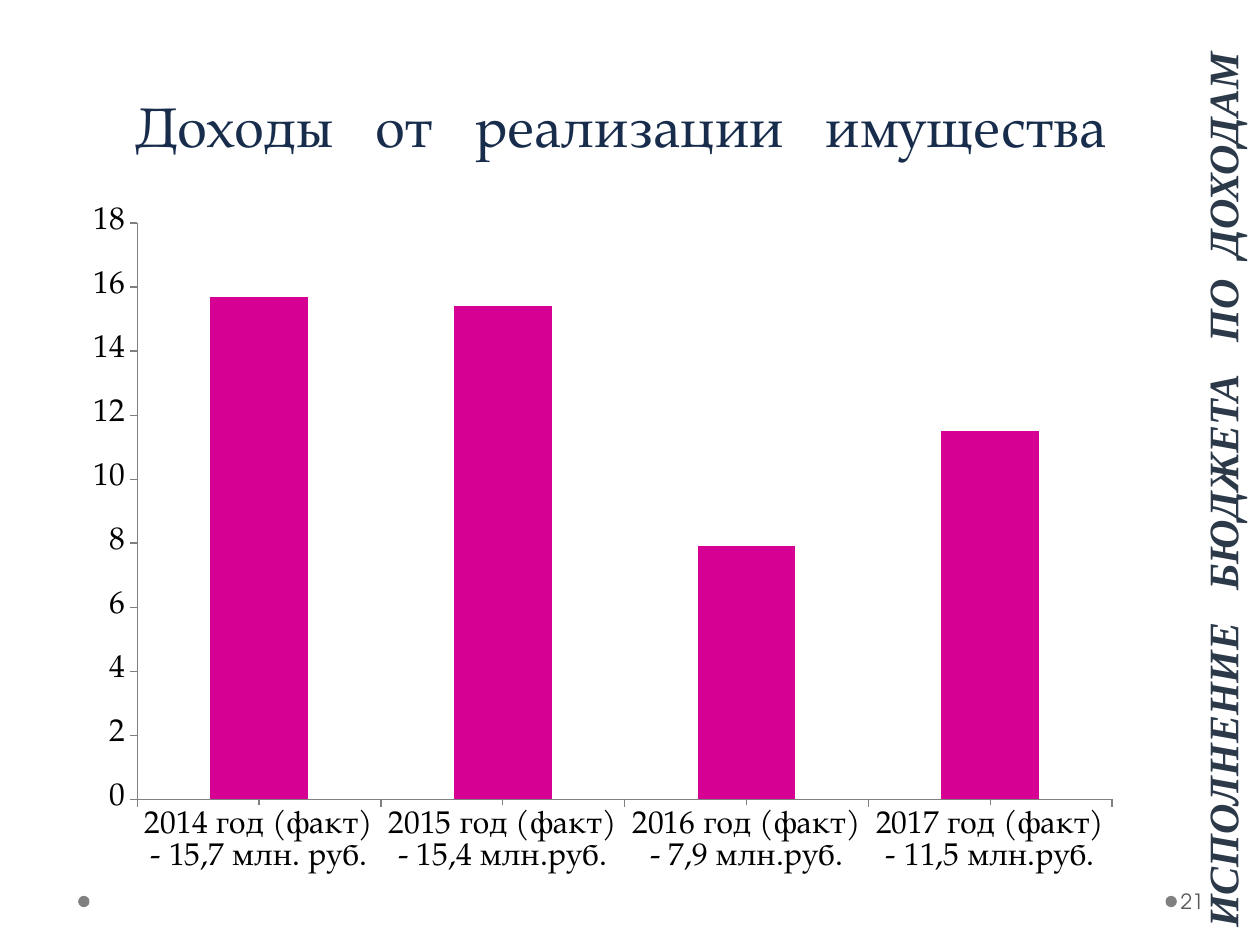
from lxml.etree import fromstring
from pptx import Presentation
from pptx.chart.data import CategoryChartData
from pptx.dml.color import RGBColor
from pptx.enum.chart import XL_CHART_TYPE, XL_TICK_MARK
from pptx.enum.shapes import MSO_SHAPE
from pptx.enum.text import MSO_ANCHOR, PP_ALIGN
from pptx.oxml.ns import nsdecls
from pptx.util import Inches, Pt

WIDE, HIGH = 10, 7.5
SERIF = "TeX Gyre Pagella"


def paint(code):
    return RGBColor.from_string(code)


def apply(item, vals):
    for key, val in vals.items():
        setattr(item, key, val)


class Deck:
    """Holds the style and the current slide; boxes are percent shares of it."""

    def __init__(self):
        self.show = Presentation()
        apply(self.show, {"slide_width": Inches(WIDE), "slide_height": Inches(HIGH)})
        self.slide = self.show.slides.add_slide(self.show.slide_layouts[6])
        self.grey = paint("808080")

    def place(self, box):
        return [Inches(part * size / 100) for part, size in zip(box, (WIDE, HIGH) * 2)]

    def dot(self, left):
        mark = self.slide.shapes.add_shape(
            MSO_SHAPE.OVAL, *self.place((left, 94.8, 0.9, 1.2)))
        mark.shadow.inherit = False
        mark.fill.solid()
        mark.fill.fore_color.rgb = self.grey
        mark.line.fill.background()

    def text(self, box, words, font, color, anchor, align, pads, gaps=(), turn=0):
        area = self.slide.shapes.add_textbox(*self.place(box))
        area.rotation = turn
        frame = area.text_frame
        sides = ("margin_left", "margin_top", "margin_right", "margin_bottom")
        apply(frame, {"word_wrap": True, "vertical_anchor": anchor})
        apply(frame, dict(zip(sides, map(Inches, pads))))
        para = frame.paragraphs[0]
        para.alignment = align
        for spot, word in enumerate(words.split()):
            if spot:
                self.run(para, " ", font, color, gaps[spot - 1])
            self.run(para, word, font, color)

    def run(self, para, words, font, color, gap=0):
        run = para.add_run()
        run.text = words
        apply(run.font, font)
        run.font.color.rgb = paint(color)
        if gap:
            run.font._element.set("spc", str(gap * 100))

    def chart(self, box, cats, vals, color, plot):
        data = CategoryChartData(number_format="General")
        data.categories = cats
        data.add_series("Series 1", vals)
        chart = self.slide.shapes.add_chart(
            XL_CHART_TYPE.COLUMN_CLUSTERED, *self.place(box), data).chart
        apply(chart, {"has_legend": False, "has_title": False})
        apply(chart.font, {"size": Pt(18), "name": SERIF})
        chart.font.color.rgb = paint("000000")
        apply(chart.plots[0], {"gap_width": 150, "vary_by_categories": False})
        fill = chart.plots[0].series[0].format.fill
        fill.solid()
        fill.fore_color.rgb = paint(color)
        for axis in (chart.category_axis, chart.value_axis):
            apply(axis, {"has_major_gridlines": False,
                         "major_tick_mark": XL_TICK_MARK.OUTSIDE})
            axis.format.line.color.rgb = self.grey
            axis.format.line.width = Pt(0.75)
        chart.category_axis.minor_tick_mark = XL_TICK_MARK.OUTSIDE
        apply(chart.value_axis, {"minimum_scale": 0, "maximum_scale": 18,
                                 "major_unit": 2})
        self.fit(chart, plot)

    def fit(self, chart, plot):
        area = chart._chartSpace.chart.plotArea
        for old in area.findall("{*}layout"):
            area.remove(old)
        modes = '<c:xMode val="edge"/><c:yMode val="edge"/>'
        sizes = "".join(f'<c:{key} val="{val}"/>' for key, val in zip("xywh", plot))
        area.insert(0, fromstring(
            f'<c:layout {nsdecls("c")}><c:manualLayout><c:layoutTarget val="inner"/>'
            f"{modes}{sizes}</c:manualLayout></c:layout>"))


def main():
    deck = Deck()
    for left in (92.5, 6.2):
        deck.dot(left)
    deck.text((5.3, 9.07, 88, 8.4), "Доходы от реализации имущества",
              {"size": Pt(32), "name": SERIF}, "182C4B",
              MSO_ANCHOR.BOTTOM, PP_ALIGN.CENTER, (0.1, 0.05, 0.1, 0.05), (16, 16, 16))
    sums = {2014: (15.7, "млн. руб."), 2015: (15.4, "млн.руб."),
            2016: (7.9, "млн.руб."), 2017: (11.5, "млн.руб.")}
    cats = [f"{year} год (факт) - {val} {unit}".replace(f"{val}", f"{val}".replace(".", ","))
            for year, (val, unit) in sums.items()]
    deck.chart((5.9, 20.67, 83.2, 73.47), cats, [val for val, unit in sums.values()],
               "D60093", (0.06, 0.04, 0.93, 0.83))
    deck.text((93.4, 92.67, 6.1, 5.33), "21",
              {"size": Pt(12), "name": "TeX Gyre Adventor"}, "595959",
              MSO_ANCHOR.MIDDLE, PP_ALIGN.LEFT, (0.03, 0.05, 0.05, 0.05))
    deck.text((57, 44, 72.1, 15.73), "ИСПОЛНЕНИЕ БЮДЖЕТА ПО ДОХОДАМ",
              {"size": Pt(24), "name": "Times New Roman", "bold": True, "italic": True},
              "2B3949", MSO_ANCHOR.BOTTOM, PP_ALIGN.CENTER, (0.05, 0, 0.05, 0),
              (12, 12, 6), 270)
    deck.show.save("out.pptx")


if __name__ == "__main__":
    main()
